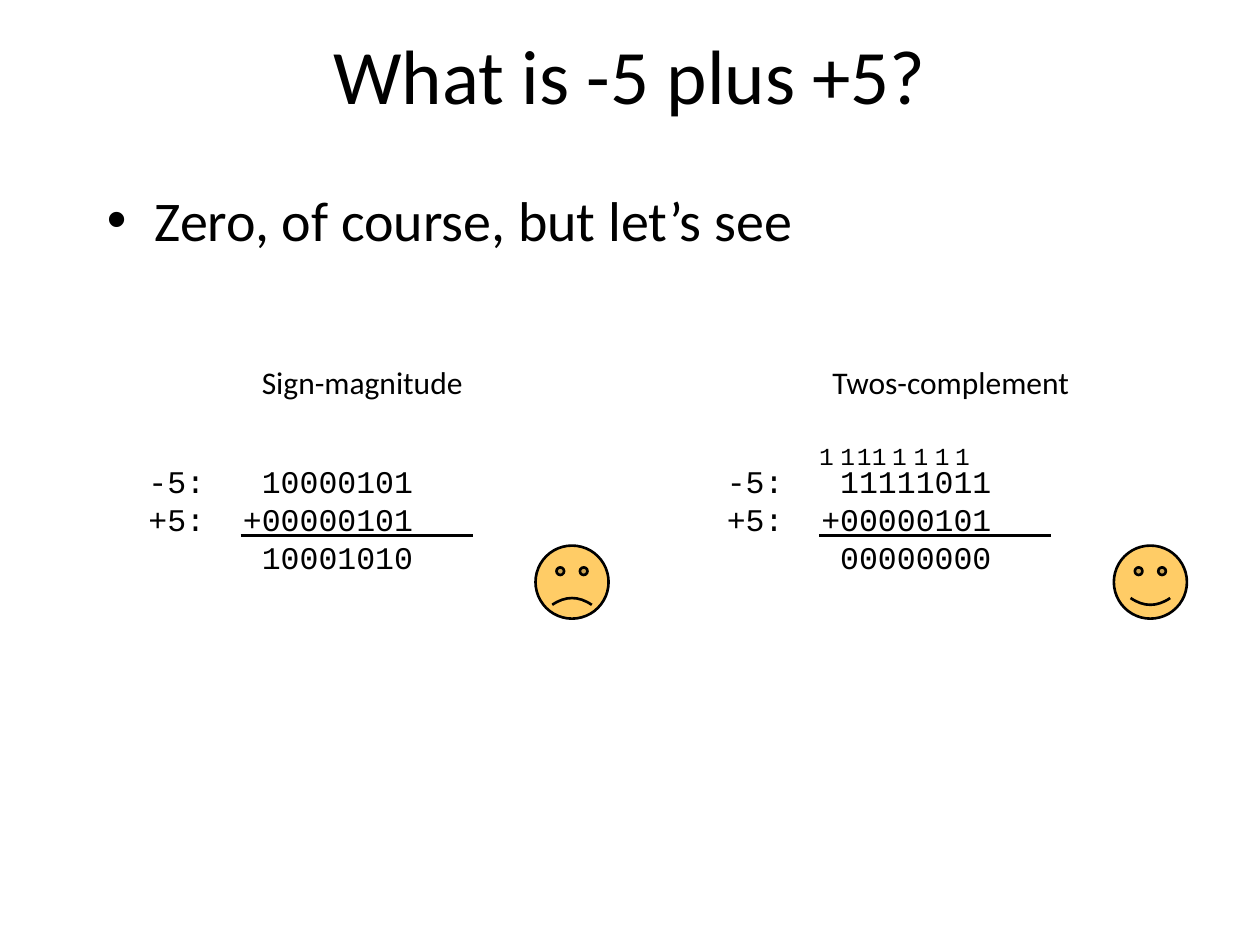
from pptx import Presentation
from pptx.util import Inches, Pt
from pptx.dml.color import RGBColor
from pptx.enum.shapes import MSO_SHAPE as Shape, MSO_CONNECTOR as Link
from pptx.enum.text import PP_ALIGN as Align, MSO_ANCHOR as Anchor
from lxml.etree import SubElement
from pptx.oxml.ns import qn

BLACK = RGBColor(0x00, 0x00, 0x00)
GOLD = RGBColor(0xFF, 0xCC, 0x66)


def write(home, text, x, y, w, h, size=18, font="Calibri", align=Align.LEFT,
          anchor=Anchor.TOP, tight=False):
    box = home.add_textbox(Inches(x), Inches(y), Inches(w), Inches(h))
    frame = box.text_frame
    frame.word_wrap = not tight
    frame.vertical_anchor = anchor
    if tight:
        frame.margin_left = frame.margin_right = 0
        frame.margin_top = frame.margin_bottom = 0
    para = frame.paragraphs[0]
    para.text = text
    para.alignment = align
    for run in para.runs:
        run.font.name = font
        run.font.size = Pt(size)
        run.font.color.rgb = BLACK
    return para


deck = Presentation()
deck.slide_width = Inches(10)
deck.slide_height = Inches(7.5)
slide = deck.slides.add_slide(deck.slide_layouts[6])

write(slide.shapes, "What is -5 plus +5?", 0.75, 0.17, 8.5, 0.83, size=44,
      align=Align.CENTER, anchor=Anchor.MIDDLE)

point = write(slide.shapes, "Zero, of course, but let’s see",
              0.75, 1.42, 8.5, 4.5, size=32)
props = point._p.get_or_add_pPr()
props.set("marL", str(Inches(0.38)))
props.set("indent", str(-Inches(0.38)))
SubElement(props, qn("a:buFont"), typeface="Arial")
SubElement(props, qn("a:buChar"), char="•")

sums = [
    ("Sign-magnitude", 1.5, 1.08, -0.047, [],
     "-5:   10000101\v+5:  +00000101\v      10001010"),
    ("Twos-complement", 6.17, 5.67, 0.047,
     [7.58, 7.42, 7.25, 7.08, 6.92, 6.8, 6.67, 6.5],
     "-5:   11111011\v+5:  +00000101\v      00000000"),
]

for name, head, left, mood, carries, digits in sums:
    group = slide.shapes.add_group_shape().shapes
    write(group, digits, left, 3.62, 3.5, 1.3, font="Courier New")

    rule = group.add_connector(Link.STRAIGHT, Inches(left + 0.83), Inches(4.25),
                               Inches(left + 2.67), Inches(4.25))
    rule.line.color.rgb = BLACK
    rule.line.width = Pt(1.5)
    SubElement(rule._element.spPr, qn("a:effectLst"))

    face = group.add_shape(Shape.SMILEY_FACE, Inches(left + 3.17), Inches(4.33),
                           Inches(0.58), Inches(0.58))
    face.shadow.inherit = False
    face.adjustments[0] = mood
    face.fill.solid()
    face.fill.fore_color.rgb = GOLD
    face.line.color.rgb = BLACK
    face.line.width = Pt(1.5)

    write(group, name, head, 2.83, 2.75, 0.5, align=Align.CENTER)
    for x in carries:
        write(group, "1", x, 3.5, 0.11, 0.23, size=14, font="Courier New",
              align=Align.CENTER, tight=True)

deck.save("out.pptx")
